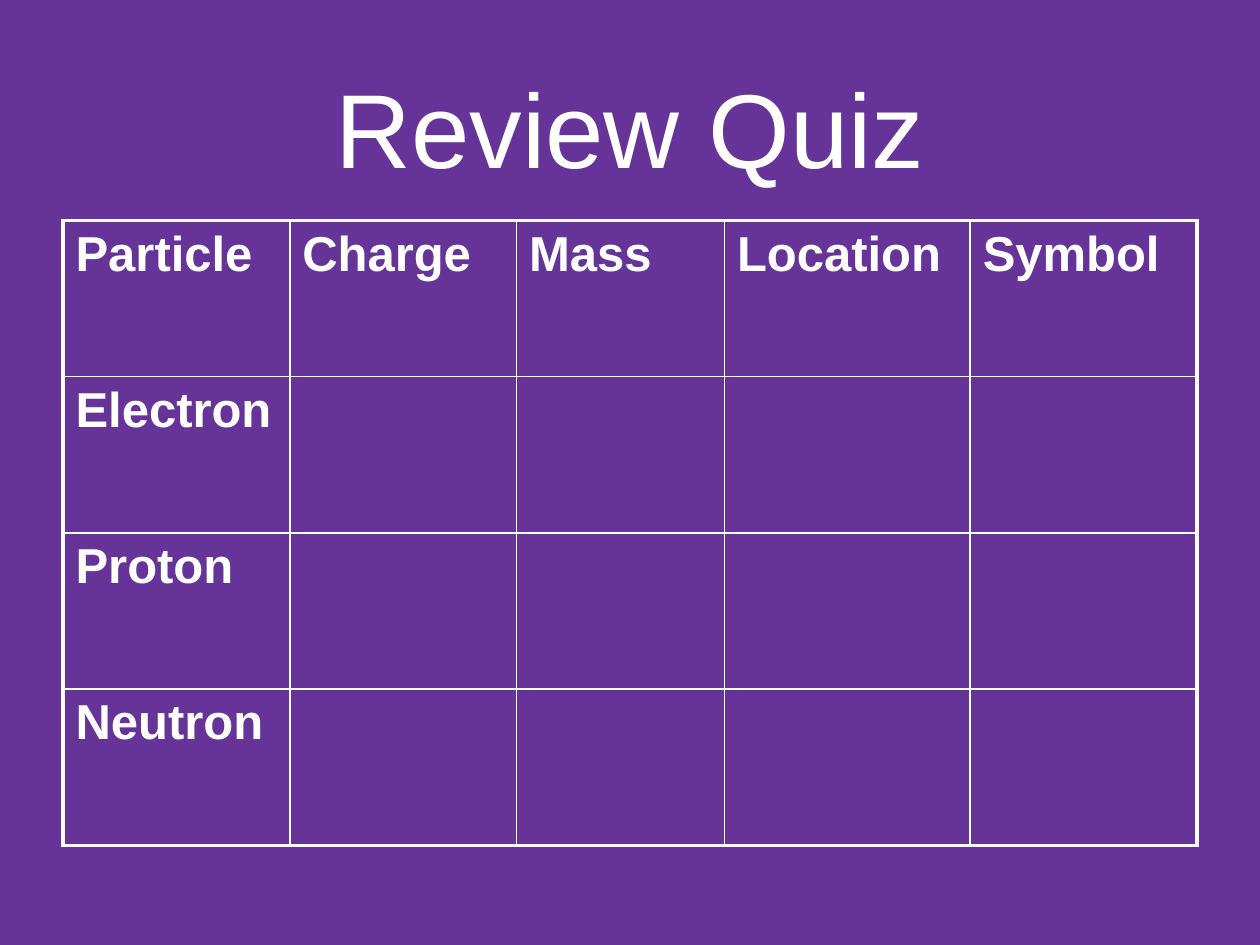
from dataclasses import dataclass

from lxml.etree import SubElement
from pptx import Presentation
from pptx.dml.color import RGBColor
from pptx.enum.text import MSO_ANCHOR as Anchor, PP_ALIGN as Align
from pptx.oxml.ns import qn
from pptx.util import Pt


@dataclass(frozen=True)
class Theme:
    background: str = "663399"
    ink: str = "FFFFFF"
    font: str = "Arial"
    title_size: int = 60
    cell_size: int = 28
    outer_line: float = 2.25
    inner_line: float = 1


THEME = Theme()
HEADINGS = ["Particle", "Charge", "Mass", "Location", "Symbol"]
PARTICLES = ["Electron", "Proton", "Neutron"]
COLUMN_WIDTHS = [129.6, 129.6, 118.8, 140.4, 129.6]
ROW_HEIGHT = 89.28
LEFT, WIDTH = 36, 648


def style_text(frame, size, bold=False):
    for para in frame.paragraphs:
        for span in para.runs:
            span.font.name = THEME.font
            span.font.size = Pt(size)
            span.font.bold = bold
            span.font.color.rgb = RGBColor.from_string(THEME.ink)


def add_title(page, text):
    box = page.shapes.add_textbox(Pt(LEFT), Pt(21.6), Pt(WIDTH), Pt(90))
    frame = box.text_frame
    frame.word_wrap = True
    frame.vertical_anchor = Anchor.BOTTOM
    frame.text = text
    frame.paragraphs[0].alignment = Align.CENTER
    style_text(frame, THEME.title_size)


def set_borders(cell, outer_sides):
    """Draw all four sides, with the heavier line on the table's outline."""
    properties = cell._tc.get_or_add_tcPr()
    for side, is_outer in outer_sides.items():
        width = THEME.outer_line if is_outer else THEME.inner_line
        line = SubElement(properties, qn(f"a:ln{side}"), w=str(Pt(width)))
        fill = SubElement(line, qn("a:solidFill"))
        SubElement(fill, qn("a:srgbClr"), val=THEME.ink)


def add_quiz_table(page):
    row_count, column_count = len(PARTICLES) + 1, len(HEADINGS)
    table = page.shapes.add_table(
        row_count, column_count,
        Pt(LEFT), Pt(126), Pt(WIDTH), Pt(ROW_HEIGHT * row_count)).table
    table.first_row = table.horz_banding = False
    for column, width in zip(table.columns, COLUMN_WIDTHS):
        column.width = Pt(width)

    labels = [HEADINGS] + [[name] + [""] * (column_count - 1) for name in PARTICLES]
    for row_index, row in enumerate(table.rows):
        row.height = Pt(ROW_HEIGHT)
        for column_index, cell in enumerate(row.cells):
            set_borders(cell, {
                "L": column_index == 0,
                "R": column_index == column_count - 1,
                "T": row_index == 0,
                "B": row_index == row_count - 1,
            })
            cell.fill.background()
            label = labels[row_index][column_index]
            if label:
                cell.text_frame.text = label
                style_text(cell.text_frame, THEME.cell_size, bold=True)


def main():
    deck = Presentation()
    deck.slide_width, deck.slide_height = Pt(720), Pt(540)
    page = deck.slides.add_slide(deck.slide_layouts[6])
    page.background.fill.solid()
    page.background.fill.fore_color.rgb = RGBColor.from_string(THEME.background)
    add_title(page, "Review Quiz")
    add_quiz_table(page)
    deck.save("out.pptx")


if __name__ == "__main__":
    main()
